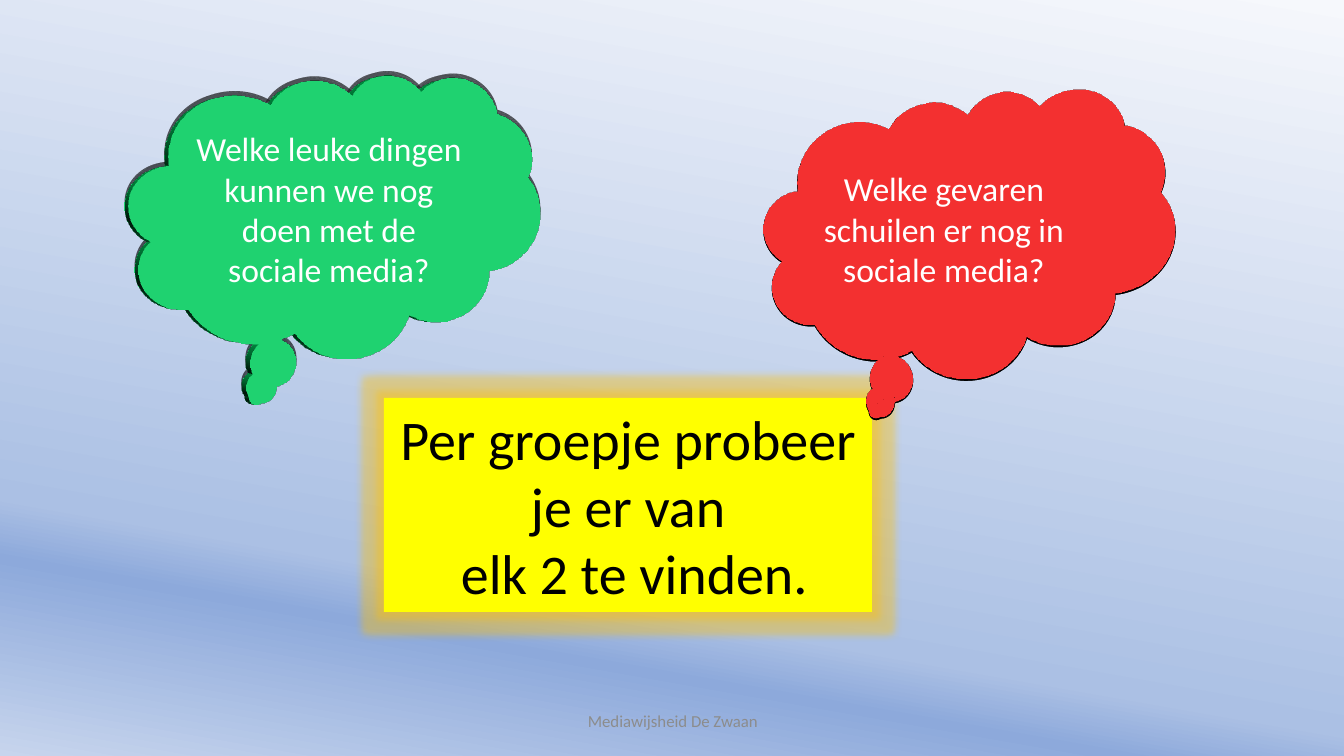
from lxml import etree
from pptx import Presentation
from pptx.dml.color import RGBColor
from pptx.enum.shapes import MSO_SHAPE
from pptx.enum.text import MSO_ANCHOR, PP_ALIGN
from pptx.oxml import parse_xml
from pptx.util import Emu, Pt

PX = 914400 / 100.8
NS = "http://schemas.openxmlformats.org/drawingml/2006/main"
BACKGROUND = [(0, "F6F8FC"), (74, "ABC0E4"), (80, "8DA9DB"), (100, "C7D5ED")]

FOOTER = dict(box=(446, 701, 454, 40), lines=["Mediawijsheid De Zwaan"],
              size=12, color="8C8C8C")
TASK = dict(box=(384, 398, 488, 214), preset=MSO_SHAPE.RECTANGLE, fill="FFFF00",
            lines=["Per groepje probeer je er van", " elk 2 te vinden."],
            size=40, color="000000")
CLOUDS = [
    dict(box=(126, 73, 437, 285), fill="00B050", camera="perspectiveRight", depth=12,
         lines=["Welke leuke dingen kunnen we nog doen met de sociale media?"],
         shadow=("000000", 40, 4, 3, 270)),
    dict(box=(741, 93, 437, 285), fill="C00000", camera="perspectiveLeft", depth=0,
         lines=["Welke gevaren schuilen er nog in sociale media?"],
         shadow=("000000", 100, 8.5, 1, 90)),
]


def rgb(value):
    return RGBColor.from_string(value)


def color_xml(value, alpha):
    return f'<a:srgbClr val="{value}"><a:alpha val="{alpha * 1000}"/></a:srgbClr>'


def add_xml(sp, xml):
    sp._element.spPr.append(parse_xml(xml.replace(">", f' xmlns:a="{NS}">', 1)))


def add_effect(sp, xml):
    for old in sp._element.spPr.findall(f"{{{NS}}}effectLst"):
        sp._element.spPr.remove(old)
    add_xml(sp, f"<a:effectLst>{xml}</a:effectLst>")


def write(sp, lines, size, color):
    tf = sp.text_frame
    for name, value in dict(word_wrap=True, vertical_anchor=MSO_ANCHOR.MIDDLE).items():
        setattr(tf, name, value)
    for i, line in enumerate(lines):
        p = tf.add_paragraph() if i else tf.paragraphs[0]
        p.alignment = PP_ALIGN.CENTER
        r = p.add_run()
        r.text = line
        for name, value in dict(name="Calibri", size=Pt(size)).items():
            setattr(r.font, name, value)
        r.font.color.rgb = rgb(color)


def add_filled(slide, preset, box, fill):
    sp = slide.shapes.add_shape(preset, *(Emu(round(v * PX)) for v in box))
    sp.shadow.inherit = False
    sp.fill.solid()
    sp.fill.fore_color.rgb = rgb(fill)
    sp.line.fill.background()
    return sp


def paint_background(slide):
    fill = slide.background.fill
    fill.gradient()
    grad = slide.background._cSld.bg.bgPr.find(f"{{{NS}}}gradFill")
    stops = grad.find(f"{{{NS}}}gsLst")
    for stop in list(stops):
        stops.remove(stop)
    for pos, value in BACKGROUND:
        stop = etree.SubElement(stops, f"{{{NS}}}gs", pos=str(pos * 1000))
        etree.SubElement(stop, f"{{{NS}}}srgbClr", val=value)
    fill.gradient_angle = 260


def add_cloud(slide, box, fill, camera, depth, lines, shadow):
    sp = add_filled(slide, MSO_SHAPE.CLOUD_CALLOUT, box, fill)
    color, alpha, blur, dist, angle = shadow
    add_effect(sp, f'<a:outerShdw blurRad="{Pt(blur)}" dist="{Pt(dist)}" '
                   f'dir="{angle * 60000}" rotWithShape="0">'
                   f'{color_xml(color, alpha)}</a:outerShdw>')
    add_xml(sp, f'<a:scene3d><a:camera prst="{camera}"/>'
                '<a:lightRig rig="threePt" dir="t"/></a:scene3d>')
    add_xml(sp, f'<a:sp3d extrusionH="{Pt(depth)}"></a:sp3d>')
    write(sp, lines, 24, "FFFFFF")


def main():
    prs = Presentation()
    prs.slide_width, prs.slide_height = Emu(round(1344 * PX)), Emu(round(756 * PX))
    slide = prs.slides.add_slide(prs.slide_layouts[6])
    paint_background(slide)

    footer = slide.shapes.add_textbox(*(Emu(round(v * PX)) for v in FOOTER["box"]))
    write(footer, FOOTER["lines"], FOOTER["size"], FOOTER["color"])

    task = add_filled(slide, TASK["preset"], TASK["box"], TASK["fill"])
    add_effect(task, f'<a:glow rad="{Pt(11)}">{color_xml("FFC000", 40)}</a:glow>')
    write(task, TASK["lines"], TASK["size"], TASK["color"])

    for cloud in CLOUDS:
        add_cloud(slide, **cloud)
    prs.save("out.pptx")


if __name__ == "__main__":
    main()
